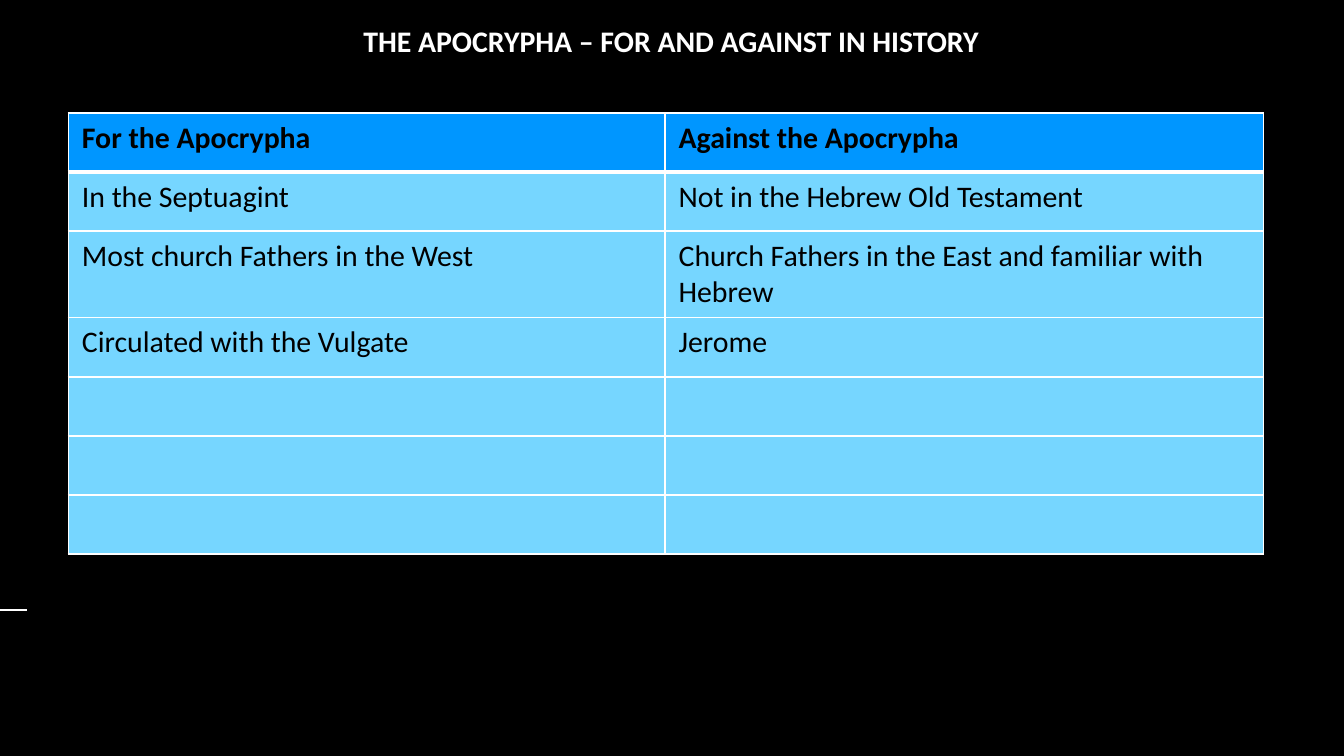
import pptx
import pptx.dml.color
import pptx.enum.shapes
import pptx.enum.text
import pptx.oxml.ns
import pptx.util
from lxml import etree
from pptx.util import Inches

RGBColor = pptx.dml.color.RGBColor
BLACK = RGBColor(0x00, 0x00, 0x00)
WHITE = RGBColor(0xFF, 0xFF, 0xFF)
HEADER_BLUE = RGBColor(0x00, 0x96, 0xFF)
BODY_BLUE = RGBColor(0x76, 0xD6, 0xFF)

TITLE = "THE APOCRYPHA – FOR AND AGAINST IN HISTORY"
ARGUMENTS = [
    ("For the Apocrypha", "Against the Apocrypha"),
    ("In the Septuagint", "Not in the Hebrew Old Testament"),
    ("Most church Fathers in the West",
     "Church Fathers in the East and familiar with Hebrew"),
    ("Circulated with the Vulgate", "Jerome"),
    ("", ""),
    ("", ""),
    ("", ""),
]
COLUMN_WIDTHS = (4.44, 4.45)
ROW_HEIGHT = 0.44


def add_run(p, text, color, bold):
    r = p.add_run()
    r.text = text
    r.font.name = "Calibri"
    r.font.size = pptx.util.Pt(16)
    r.font.bold = bold
    r.font.color.rgb = color


def set_title(s, text):
    sp = s.shapes.title
    sp.left, sp.top = Inches(2.51), Inches(0.12)
    sp.width, sp.height = Inches(4.97), Inches(0.34)
    tf = sp.text_frame
    tf.word_wrap = True
    tf.auto_size = pptx.enum.text.MSO_AUTO_SIZE.NONE
    tf.vertical_anchor = pptx.enum.text.MSO_ANCHOR.TOP
    p = tf.paragraphs[0]
    p.alignment = pptx.enum.text.PP_ALIGN.CENTER
    add_run(p, text, WHITE, True)


def set_borders(cell, widths):
    """Draw white borders; widths maps a side (L, R, T, B) to points."""
    tc_pr = cell._tc.get_or_add_tcPr()
    qn = pptx.oxml.ns.qn
    for i, side in enumerate("LRTB"):
        ln = etree.Element(qn(f"a:ln{side}"), w=str(pptx.util.Pt(widths[side])))
        fill = etree.SubElement(ln, qn("a:solidFill"))
        etree.SubElement(fill, qn("a:srgbClr"), val=str(WHITE))
        tc_pr.insert(i, ln)


def add_argument_table(s, rows):
    frame = s.shapes.add_table(
        len(rows), len(COLUMN_WIDTHS), Inches(0.51), Inches(0.84),
        Inches(sum(COLUMN_WIDTHS)), Inches(ROW_HEIGHT * len(rows)))
    table = frame.table
    for column, width in zip(table.columns, COLUMN_WIDTHS):
        column.width = Inches(width)
    for i, texts in enumerate(rows):
        table.rows[i].height = Inches(ROW_HEIGHT)
        for j, text in enumerate(texts):
            cell = table.cell(i, j)
            cell.fill.solid()
            cell.fill.fore_color.rgb = HEADER_BLUE if i == 0 else BODY_BLUE
            set_borders(cell, {"L": 1, "R": 1, "T": 3 if i == 1 else 1,
                               "B": 3 if i == 0 else 1})
            if text:
                add_run(cell.text_frame.paragraphs[0], text, BLACK, i == 0)


def add_rule(s, x1, x2, y):
    line = s.shapes.add_connector(
        pptx.enum.shapes.MSO_CONNECTOR.STRAIGHT,
        Inches(x1), Inches(y), Inches(x2), Inches(y))
    line.line.color.rgb = WHITE
    line.line.width = pptx.util.Pt(0.75)
    etree.SubElement(line._element.spPr, pptx.oxml.ns.qn("a:effectLst"))


def main():
    prs = pptx.Presentation()
    prs.slide_width = Inches(10)
    prs.slide_height = prs.slide_width * 9 // 16
    s = prs.slides.add_slide(prs.slide_layouts[5])
    s.background.fill.solid()
    s.background.fill.fore_color.rgb = BLACK
    add_rule(s, -0.16, 0.2, 4.54)
    set_title(s, TITLE)
    add_argument_table(s, ARGUMENTS)
    prs.save("out.pptx")


if __name__ == "__main__":
    main()
